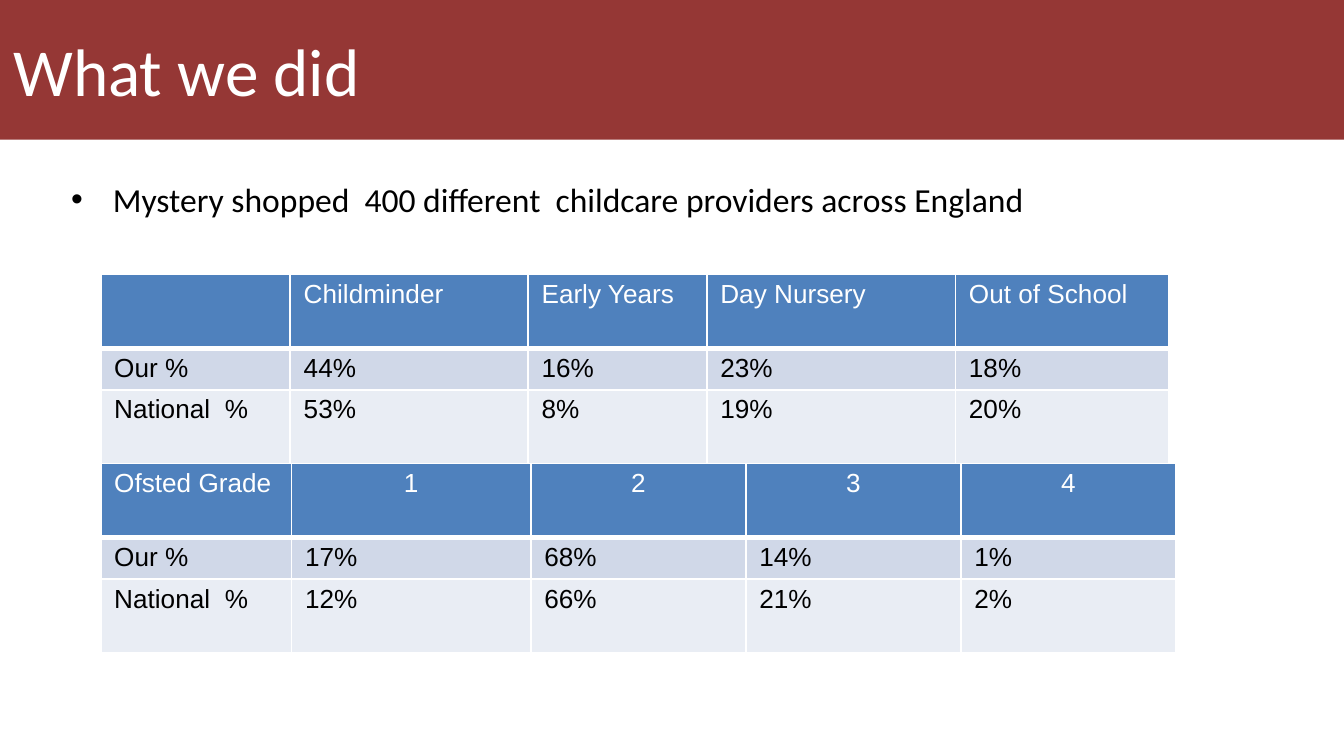
from lxml import etree
from pptx import Presentation
from pptx import util as u
from pptx.dml.color import RGBColor
from pptx.enum import text
from pptx.oxml import ns

HUES = {"band": "953735", "head": "4F81BD", "odd": "D0D8E8",
        "even": "E9EDF4", "white": "FFFFFF", "black": "000000"}
ROWS = (0.55, 0.31, 0.55)
FILLS = ("head", "odd", "even")
LEFT, MID = text.PP_ALIGN.LEFT, text.PP_ALIGN.CENTER


def hue(name):
    return RGBColor.from_string(HUES[name])


def style(para, size, face, color, **look):
    for key, val in look.items():
        setattr(para, key, val)
    for key, val in {"size": u.Pt(size), "name": face, "bold": False}.items():
        setattr(para.font, key, val)
    para.font.color.rgb = hue(color)


def place(shape, box):
    for key, val in zip(("left", "top", "width", "height"), box):
        setattr(shape, key, u.Inches(val))


def add_title(slide, box, words):
    title = slide.shapes.title
    place(title, box)
    title.fill.solid()
    title.fill.fore_color.rgb = hue("band")
    frame = title.text_frame
    frame.text = words
    frame.vertical_anchor = text.MSO_ANCHOR.MIDDLE
    style(frame.paragraphs[0], 36, "Calibri", "white", alignment=LEFT)


def add_list(slide, box, items):
    body = slide.placeholders[1]
    place(body, box)
    frame = body.text_frame
    frame.text = "\n".join(items)
    frame.auto_size = text.MSO_AUTO_SIZE.NONE
    for para in frame.paragraphs:
        style(para, 18, "Calibri", "black", alignment=LEFT, space_before=u.Pt(0))
        props = para._p.get_or_add_pPr()
        props.set("marL", str(u.Inches(0.31)))
        props.set("indent", str(-u.Inches(0.31)))


def add_edges(cell):
    """Rule a heading cell in white, heavier at the bottom."""
    props = cell._tc.get_or_add_tcPr()
    for side, width in {"L": 1, "R": 1, "T": 1, "B": 3}.items():
        line = etree.SubElement(props, ns.qn(f"a:ln{side}"), w=str(u.Pt(width)))
        fill = etree.SubElement(line, ns.qn("a:solidFill"))
        etree.SubElement(fill, ns.qn("a:srgbClr"), val=HUES["white"])


def add_grid(slide, left, top, cols, data, align=LEFT):
    """Draw a table; align applies to the headings after the first."""
    size = (left, top, sum(cols), sum(ROWS))
    table = slide.shapes.add_table(len(ROWS), len(cols), *map(u.Inches, size)).table
    for col, width in zip(table.columns, cols):
        col.width = u.Inches(width)
    for r, (high, fill, words) in enumerate(zip(ROWS, FILLS, data)):
        table.rows[r].height = u.Inches(high)
        head = r == 0
        for c, word in enumerate(words):
            cell = table.cell(r, c)
            cell.text = word
            cell.margin_top = cell.margin_bottom = u.Inches(0.04)
            if head:
                add_edges(cell)
            cell.fill.solid()
            cell.fill.fore_color.rgb = hue(fill)
            style(cell.text_frame.paragraphs[0], 14, "Arial",
                  "white" if head else "black",
                  alignment=align if head and c else LEFT)


def main():
    deck = Presentation()
    deck.slide_width = u.Inches(10)
    deck.slide_height = deck.slide_width * 9 // 16
    slide = deck.slides.add_slide(deck.slide_layouts[1])
    add_title(slide, (0, 0, 10, 1.04), "What we did")
    add_list(slide, (0.43, 1.28, 9.13, 0.4),
             ["Mystery shopped  400 different  childcare providers across England"])
    left, top = 0.75, 2.04
    add_grid(slide, left, top, (1.41, 1.77, 1.33, 1.85, 1.59), (
        ("", "Childminder", "Early Years", "Day Nursery", "Out of School"),
        ("Our %", "44%", "16%", "23%", "18%"),
        ("National  %", "53%", "8%", "19%", "20%")))
    add_grid(slide, left, top + sum(ROWS), (1.42, 1.78, 1.6, 1.6, 1.6), (
        ("Ofsted Grade", "1", "2", "3", "4"),
        ("Our %", "17%", "68%", "14%", "1%"),
        ("National  %", "12%", "66%", "21%", "2%")), MID)
    deck.save("out.pptx")


if __name__ == "__main__":
    main()
